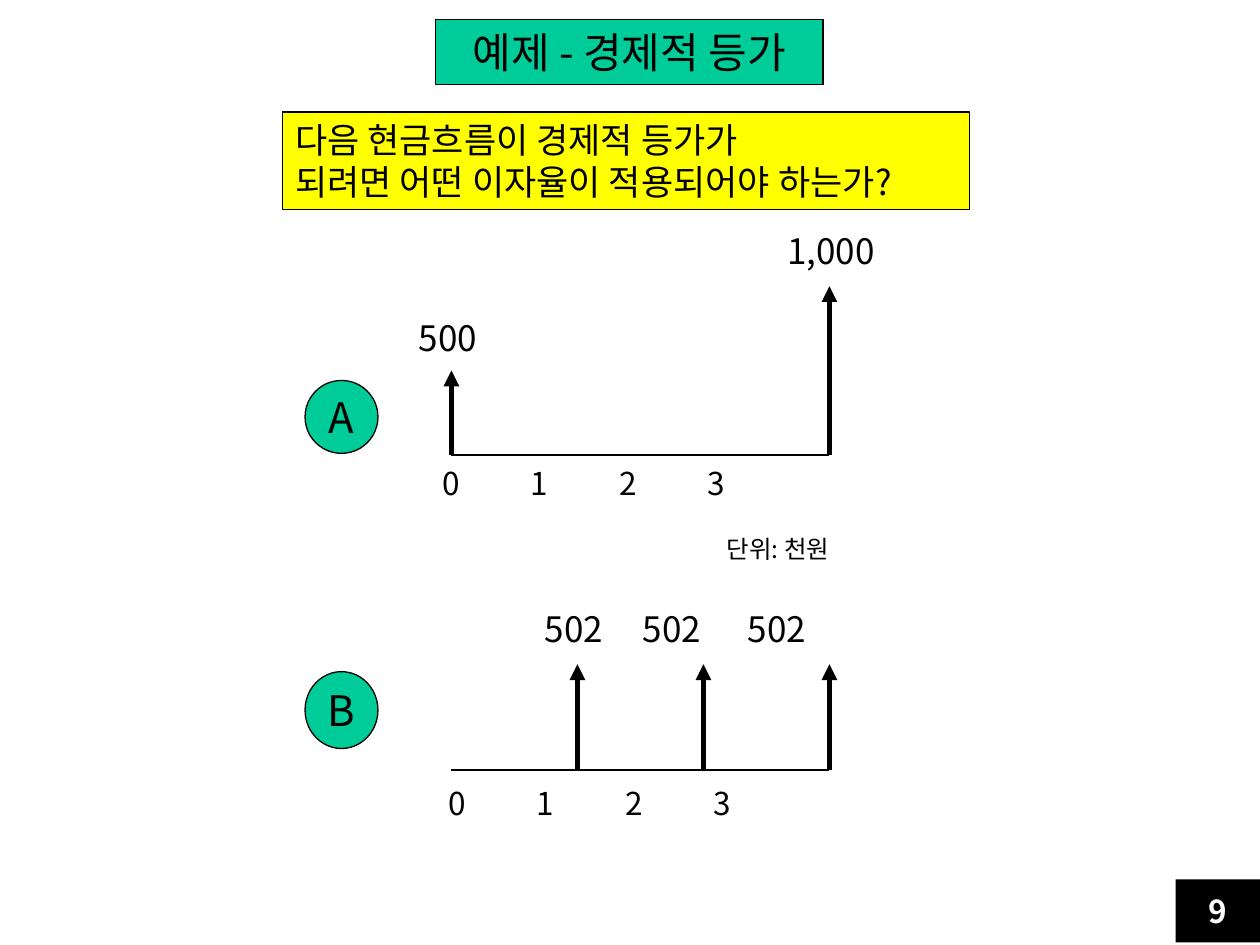
from lxml.etree import SubElement
from pptx import Presentation
from pptx.dml.color import RGBColor
from pptx.enum.shapes import MSO_CONNECTOR, MSO_SHAPE
from pptx.enum.text import MSO_ANCHOR, PP_ALIGN
from pptx.oxml.ns import qn
from pptx.util import Cm, Pt

THEME = {
    "font": "Noto Sans CJK KR",
    "black": RGBColor(0, 0, 0),
    "white": RGBColor(255, 255, 255),
    "green": RGBColor(0, 0xCC, 0x99),
    "yellow": RGBColor(255, 255, 0),
    "title": 24, "body": 20, "tick": 18, "note": 14,
    "thin": 0.75, "thick": 3,
}
TITLE = "예제 - 경제적 등가"
QUESTION = ["다음 현금흐름이 경제적 등가가", "되려면 어떤 이자율이 적용되어야 하는가?"]
UNIT = "단위: 천원"
PAGE = "9"
TICKS = ["0", "1", "2", "3"]

AXIS_X, PERIOD, TICK_STEP = 9.1, 2.54, 1.78
LABEL_W, LABEL_H = 2.4, 1.1
FLOWS = [
    {"name": "A", "circle": (6.15, 7.67, 1.47, 1.47), "axis_y": 9.17,
     "tick_x": 9.1, "tick_y": 9.22,
     "cash": [(0, 1.7, "500", 9.03, 6.25), (3, 3.4, "1,000", 16.75, 4.5)]},
    {"name": "B", "circle": (6.15, 13.54, 1.47, 1.55), "axis_y": 15.52,
     "tick_x": 9.22, "tick_y": 15.67,
     "cash": [(1, 2.13, "502", 11.57, 12.12), (2, 2.13, "502", 13.55, 12.12),
              (3, 2.13, "502", 15.66, 12.12)]},
]


def write(sp, text, size="body", color="black", bold=False,
          align=PP_ALIGN.CENTER, anchor=MSO_ANCHOR.MIDDLE, wrap=False):
    tf = sp.text_frame
    tf.word_wrap = wrap
    tf.vertical_anchor = anchor
    tf.margin_left = tf.margin_right = Cm(0.25)
    tf.margin_top = tf.margin_bottom = Cm(0.13)
    for i, line in enumerate(text if isinstance(text, list) else [text]):
        p = tf.add_paragraph() if i else tf.paragraphs[0]
        p.alignment = align
        p.line_spacing = Pt(THEME[size] * 1.2)
        r = p.add_run()
        r.text = line
        r.font.name = THEME["font"]
        r.font.size = Pt(THEME[size])
        r.font.bold = bold
        r.font.color.rgb = THEME[color]
        SubElement(r.font._element, qn("a:ea"), typeface=THEME["font"])


def paint(sp, fill, outlined=True):
    sp.fill.solid()
    sp.fill.fore_color.rgb = THEME[fill]
    if outlined:
        sp.line.color.rgb = THEME["black"]
        sp.line.width = Pt(THEME["thin"])
    else:
        sp.line.fill.background()


def add_box(slide, kind, box, fill, outlined=True):
    sp = slide.shapes.add_shape(kind, *map(Cm, box))
    sp.shadow.inherit = False
    paint(sp, fill, outlined)
    return sp


def add_label(slide, text, center, top, size):
    sp = slide.shapes.add_textbox(Cm(center - LABEL_W / 2), Cm(top), Cm(LABEL_W), Cm(LABEL_H))
    write(sp, text, size=size, anchor=MSO_ANCHOR.TOP)


def add_line(slide, start, end, width, arrow=False):
    line = slide.shapes.add_connector(MSO_CONNECTOR.STRAIGHT, *map(Cm, start + end))
    line.line.color.rgb = THEME["black"]
    line.line.width = Pt(THEME[width])
    if arrow:
        SubElement(line.line._get_or_add_ln(), qn("a:tailEnd"), type="triangle")
    SubElement(line._element.spPr, qn("a:effectLst"))


def add_flow(slide, flow):
    circle = add_box(slide, MSO_SHAPE.OVAL, flow["circle"], "green")
    write(circle, flow["name"], size="title")
    y = flow["axis_y"]
    add_line(slide, (AXIS_X, y), (AXIS_X + 3 * PERIOD, y), "thin")
    for year, height, amount, center, top in flow["cash"]:
        x = AXIS_X + year * PERIOD
        add_line(slide, (x, y), (x, y - height), "thick", arrow=True)
        add_label(slide, amount, center, top, "body")
    for i, tick in enumerate(TICKS):
        add_label(slide, tick, flow["tick_x"] + i * TICK_STEP, flow["tick_y"], "tick")


def main():
    prs = Presentation()
    prs.slide_width, prs.slide_height = Cm(25.4), Cm(19.05)
    slide = prs.slides.add_slide(prs.slide_layouts[5])

    title = slide.shapes.title
    title.left, title.top, title.width, title.height = map(Cm, (8.78, 0.4, 7.81, 1.3))
    paint(title, "green")
    write(title, TITLE, size="title")

    question = add_box(slide, MSO_SHAPE.RECTANGLE, (5.7, 2.26, 13.85, 1.96), "yellow")
    write(question, QUESTION, align=PP_ALIGN.LEFT, wrap=True)

    for flow in FLOWS:
        add_flow(slide, flow)

    unit = slide.shapes.add_textbox(*map(Cm, (14.4, 10.64, 4.45, 0.84)))
    write(unit, UNIT, size="note", align=PP_ALIGN.LEFT, wrap=True)

    page = add_box(slide, MSO_SHAPE.RECTANGLE, (23.7, 17.73, 1.7, 1.27), "black", outlined=False)
    write(page, PAGE, size="tick", color="white", bold=True)

    prs.save("out.pptx")


if __name__ == "__main__":
    main()
